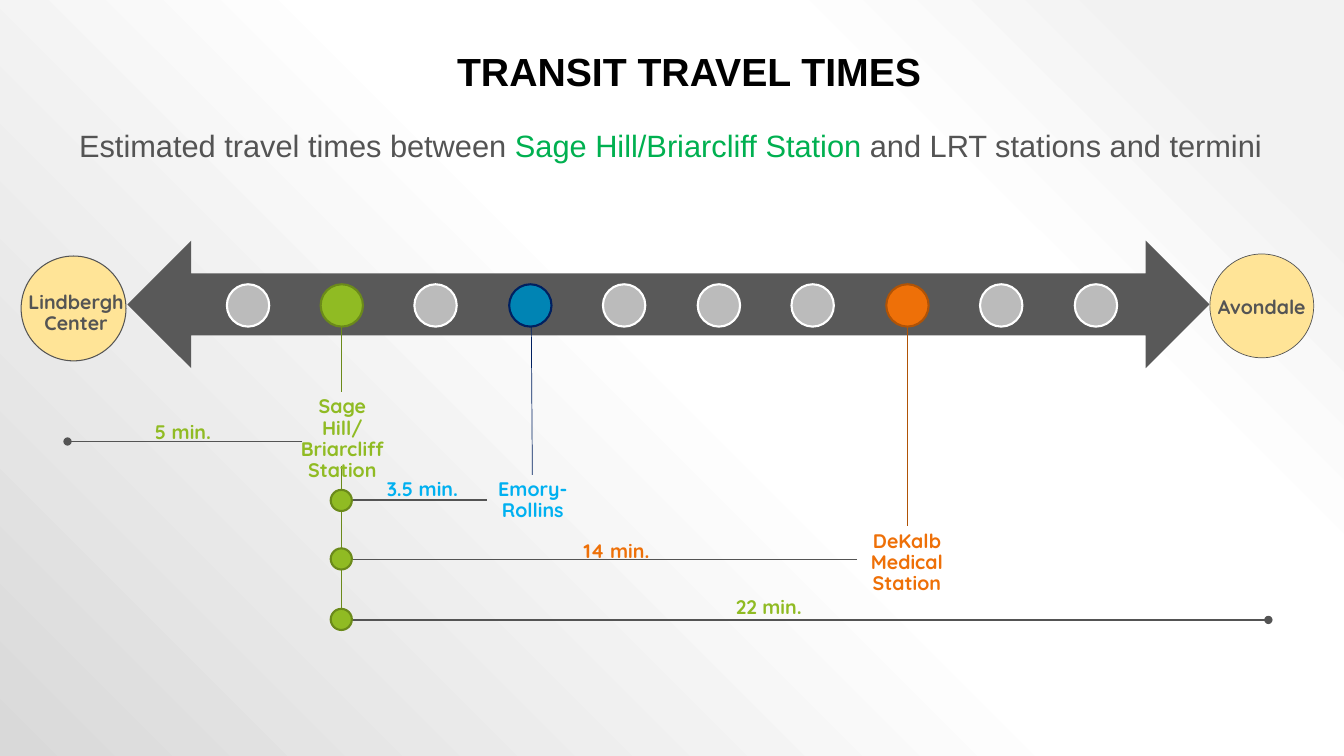
from lxml import etree
from pptx import Presentation
from pptx.dml.color import RGBColor
from pptx.enum import shapes, text
from pptx.oxml import parse_xml
from pptx.oxml.ns import nsdecls, qn

PX = 9144  # 100 px to the inch
GREY, GREEN, MOSS, BLUE = "545454", "90BB23", "6B8A1A", "00B0F0"
NAVY, ORANGE, RUST, CREAM = "002060", "EE7008", "B05306", "FFE497"
rgb = RGBColor.from_string

deck = Presentation()
deck.slide_width, deck.slide_height = 1333 * PX, 750 * PX
slide = deck.slides.add_slide(deck.slide_layouts[6])
parts = slide.shapes


def draw(kind, box, fill, edge, width):
    shape = parts.add_shape(kind, *[n * PX for n in box])
    shape.shadow.inherit = False
    shape.fill.solid()
    shape.fill.fore_color.rgb = rgb(fill)
    shape.line.color.rgb = rgb(edge)
    shape.line.width = int(width * 12700)
    return shape


def label(box, lines, size, font, wrap=True):
    """Each line is a list of (words, colour) runs."""
    frame = parts.add_textbox(*[n * PX for n in box]).text_frame
    frame.word_wrap = wrap
    for i, line in enumerate(lines):
        para = frame.add_paragraph() if i else frame.paragraphs[0]
        para.alignment = text.PP_ALIGN.CENTER
        para.line_spacing = 0.9
        for words, hue in line:
            run = para.add_run()
            run.text = words
            run.font.size = size * 12700
            run.font.name = font
            run.font.color.rgb = rgb(hue)
            run.font.bold = size != 22
    return frame


# Background: radial gradient from the top right corner
stops = [(10, "F2F2F2"), (28, "FFFFFF"), (48, "FFFFFF"), (100, "D9D9D9")]
marks = "".join(f'<a:gs pos="{at * 1000}"><a:srgbClr val="{hue}"/></a:gs>'
                for at, hue in stops)
slide.element.cSld.insert(0, parse_xml(
    f'<p:bg {nsdecls("p", "a")}><p:bgPr><a:gradFill><a:gsLst>{marks}</a:gsLst>'
    '<a:path path="circle"><a:fillToRect l="100000" b="100000"/></a:path>'
    '</a:gradFill><a:effectLst/></p:bgPr></p:bg>'))

# Title and subtitle
label((150, 47, 1067, 145), [[("TRANSIT TRAVEL TIMES", "000000")]], 28, "Arial")
label((64, 125, 1202, 92), [[
    ("Estimated travel times between ", GREY),
    ("Sage Hill/Briarcliff Station ", "00B050"),
    ("and LRT stations and termini", GREY)]], 22, "Arial")

# Rail line
rail = draw(shapes.MSO_SHAPE.LEFT_RIGHT_ARROW, (133, 250, 1060, 104),
            "595959", "595959", 6.75)
etree.SubElement(rail.line._ln, qn("a:miter")).set("lim", "800000")

# Spine, leaders and time lines: from, to, colour, width, dot at the end
for x1, y1, x2, y2, hue, width, dot in [
    (339, 462, 339, 604, MOSS, 0.5, False),
    (339, 324, 339, 389, MOSS, 0.5, False),
    (527, 324, 528, 471, NAVY, 0.5, False),
    (900, 324, 900, 522, RUST, 0.5, False),
    (300, 438, 67, 438, GREY, 1, True),
    (483, 496, 339, 496, GREY, 1, False),
    (850, 555, 339, 555, GREY, 1, False),
    (339, 615, 1258, 615, GREY, 1, True),
]:
    wire = parts.add_connector(shapes.MSO_CONNECTOR.STRAIGHT,
                               x1 * PX, y1 * PX, x2 * PX, y2 * PX)
    wire.line.color.rgb = rgb(hue)
    wire.line.width = int(width * 12700)
    if dot:
        etree.SubElement(wire.line._ln, qn("a:tailEnd")).set("type", "oval")
    etree.SubElement(wire._element.spPr, qn("a:effectLst"))

# Termini, evenly spaced stations and spine dots
OVAL = shapes.MSO_SHAPE.OVAL
draw(OVAL, (21, 254, 104, 104), CREAM, GREY, 0.75)
draw(OVAL, (1200, 252, 103, 103), CREAM, GREY, 0.5)
stops = {1: (GREEN, MOSS), 3: ("0084B4", NAVY), 7: (ORANGE, RUST)}
for i in range(10):
    fill, edge = stops.get(i, ("BBBBBB", "FFFFFF"))
    draw(OVAL, (225 + 841 * i // 9, 282, 42, 42), fill, edge, 1.5)
for top in (486, 544, 604):
    draw(OVAL, (328, top, 21, 21), GREEN, MOSS, 1.5)

# Station names and times
for box, lines, hue, wrap in [
    ((18, 285, 115, 72), ["Lindbergh", "Center"], GREY, False),
    ((1195, 290, 113, 51), ["Avondale"], GREY, False),
    ((287, 389, 105, 74), ["Sage Hill/", "Briarcliff", "Station"], GREEN, True),
    ((456, 471, 145, 53), ["Emory-", "Rollins"], BLUE, True),
    ((827, 522, 145, 74), ["DeKalb Medical Station"], ORANGE, True),
    ((109, 414, 145, 31), ["5 min."], GREEN, True),
    ((355, 471, 128, 31), ["3.5 min."], BLUE, True),
    ((539, 532, 145, 31), ["14 min."], ORANGE, True),
    ((690, 588, 145, 31), ["22 min."], GREEN, True),
]:
    label(box, [[(line, hue)] for line in lines], 14, "Quicksand", wrap)

deck.save("out.pptx")
